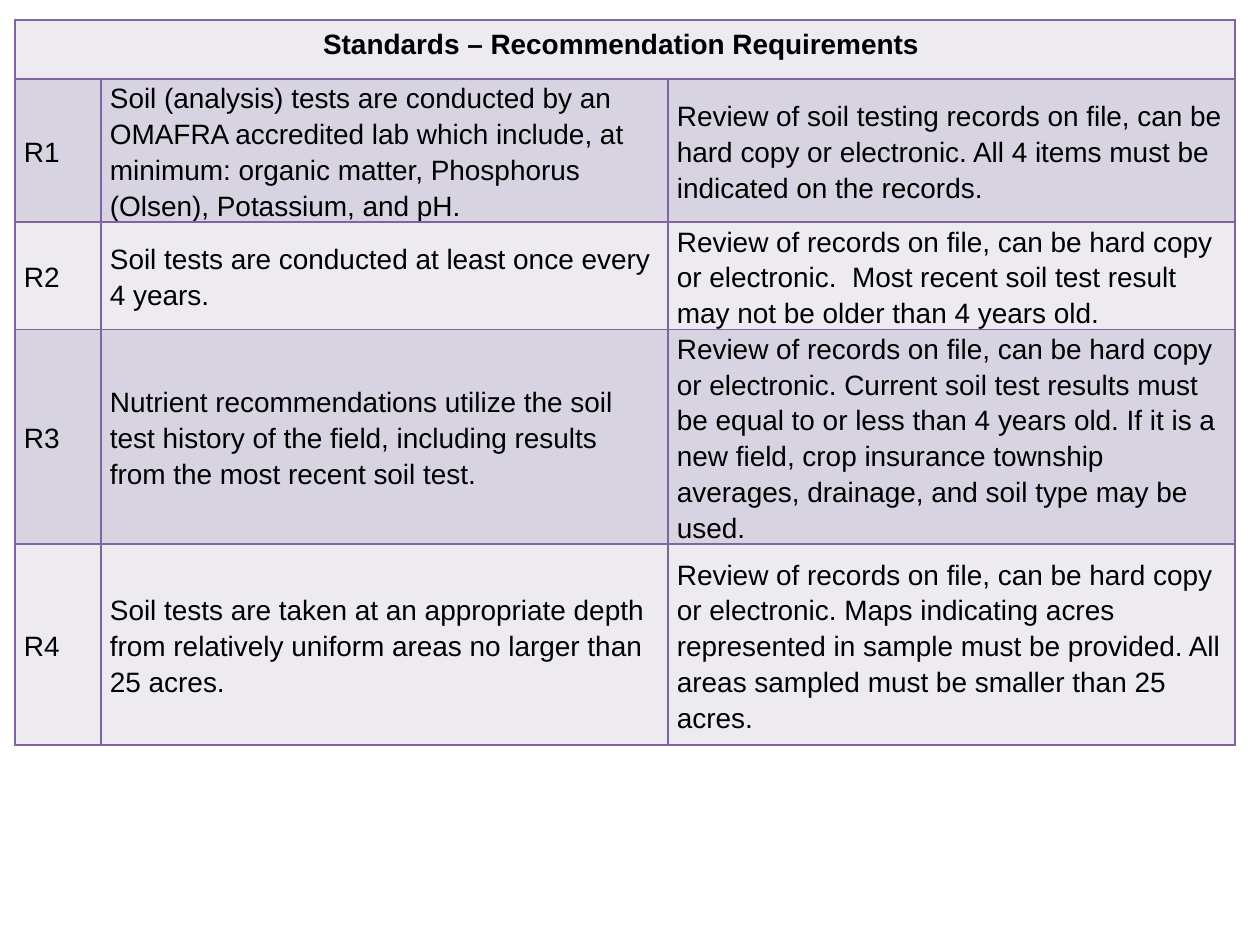
"""Build the slide with the table of soil testing recommendation requirements."""
from dataclasses import dataclass

from lxml.etree import SubElement
from pptx import Presentation
from pptx.dml.color import RGBColor
from pptx.enum.text import MSO_ANCHOR as Anchor, PP_ALIGN as Align
from pptx.oxml.ns import qn
from pptx.table import Table, _Cell as Cell
from pptx.util import Emu, Pt

PX_PER_INCH = 126
LIGHT, DARK, BORDER, BLACK = "EDEAF0", "D8D3E0", "8064A2", "000000"
COLUMN_WIDTHS = (86, 567, 567)
TITLE = "Standards – Recommendation Requirements "
TITLE_HEIGHT = 59


@dataclass(frozen=True)
class Requirement:
    """One standard, the way it is reviewed, and its row height in px."""
    code: str
    standard: str
    review: str
    height: int


@dataclass(frozen=True)
class CellStyle:
    """Fill, margins in px and text layout of a cell."""
    fill: str
    margin_x: int = 9
    margin_y: int = 0
    anchor: Anchor = Anchor.MIDDLE
    align: Align = Align.LEFT
    line_spacing: float = 1.15
    bold: bool = False


REQUIREMENTS = (
    Requirement(
        "R1",
        "Soil (analysis) tests are conducted by an OMAFRA accredited lab which include, "
        "at minimum: organic matter, Phosphorus (Olsen), Potassium, and pH.",
        "Review of soil testing records on file, can be hard copy or electronic. "
        "All 4 items must be indicated on the records.",
        143,
    ),
    Requirement(
        "R2",
        "Soil tests are conducted at least once every 4 years.",
        "Review of records on file, can be hard copy or electronic.  "
        "Most recent soil test result may not be older than 4 years old.",
        107,
    ),
    Requirement(
        "R3",
        "Nutrient recommendations utilize the soil test history of the field, "
        "including results from the most recent soil test.",
        "Review of records on file, can be hard copy or electronic. "
        "Current soil test results must be equal to or less than 4 years old. "
        "If it is a new field, crop insurance township averages, drainage, "
        "and soil type may be used.",
        214,
    ),
    Requirement(
        "R4",
        "Soil tests are taken at an appropriate depth from relatively uniform areas "
        "no larger than 25 acres.",
        "Review of records on file, can be hard copy or electronic. "
        "Maps indicating acres represented in sample must be provided. "
        "All areas sampled must be smaller than 25 acres.",
        201,
    ),
)
TITLE_STYLE = CellStyle(LIGHT, 19, 9, Anchor.TOP, Align.CENTER, 1.0, True)


def px(length: int) -> Emu:
    """Turn px into EMU."""
    return Emu(round(length * 914400 / PX_PER_INCH))


def color(hex_value: str) -> RGBColor:
    """Turn a hex string into a colour."""
    return RGBColor.from_string(hex_value)


def add_borders(cell: Cell) -> None:
    """Draw the four borders of a cell, placed before its fill."""
    properties = cell._tc.get_or_add_tcPr()
    for index, side in enumerate(("lnL", "lnR", "lnT", "lnB")):
        line = SubElement(properties, qn(f"a:{side}"), w=str(Pt(1)))
        fill = SubElement(line, qn("a:solidFill"))
        SubElement(fill, qn("a:srgbClr"), val=BORDER)
        properties.insert(index, line)


def write_cell(cell: Cell, text: str, style: CellStyle) -> None:
    """Fill a cell with its background and text."""
    cell.fill.solid()
    cell.fill.fore_color.rgb = color(style.fill)
    cell.margin_left = cell.margin_right = px(style.margin_x)
    cell.margin_top = cell.margin_bottom = px(style.margin_y)
    cell.vertical_anchor = style.anchor
    paragraph = cell.text_frame.paragraphs[0]
    paragraph.alignment = style.align
    paragraph.line_spacing = style.line_spacing
    run = paragraph.add_run()
    run.text = text
    run.font.name = "Arial"
    run.font.size = Pt(16)
    run.font.bold = style.bold
    run.font.color.rgb = color(BLACK)


def fill_table(table: Table) -> None:
    """Size the grid and write the title and the requirements."""
    for column, width in zip(table.columns, COLUMN_WIDTHS):
        column.width = px(width)
    heights = (TITLE_HEIGHT, *(item.height for item in REQUIREMENTS))
    for row, height in zip(table.rows, heights):
        row.height = px(height)
    for cell in table.iter_cells():
        add_borders(cell)
    title_cell = table.cell(0, 0)
    title_cell.merge(table.cell(0, len(COLUMN_WIDTHS) - 1))
    write_cell(title_cell, TITLE, TITLE_STYLE)
    for row, item in enumerate(REQUIREMENTS, start=1):
        style = CellStyle(DARK if row % 2 else LIGHT)
        for column, text in enumerate((item.code, item.standard, item.review)):
            write_cell(table.cell(row, column), text, style)


def main() -> None:
    """Create and save the presentation."""
    presentation = Presentation()
    presentation.slide_width = px(1260)
    presentation.slide_height = px(945)
    slide = presentation.slides.add_slide(presentation.slide_layouts[6])
    height = TITLE_HEIGHT + sum(item.height for item in REQUIREMENTS)
    frame = slide.shapes.add_table(
        len(REQUIREMENTS) + 1, len(COLUMN_WIDTHS),
        px(15), px(20), px(sum(COLUMN_WIDTHS)), px(height),
    )
    fill_table(frame.table)
    presentation.save("out.pptx")


if __name__ == "__main__":
    main()
